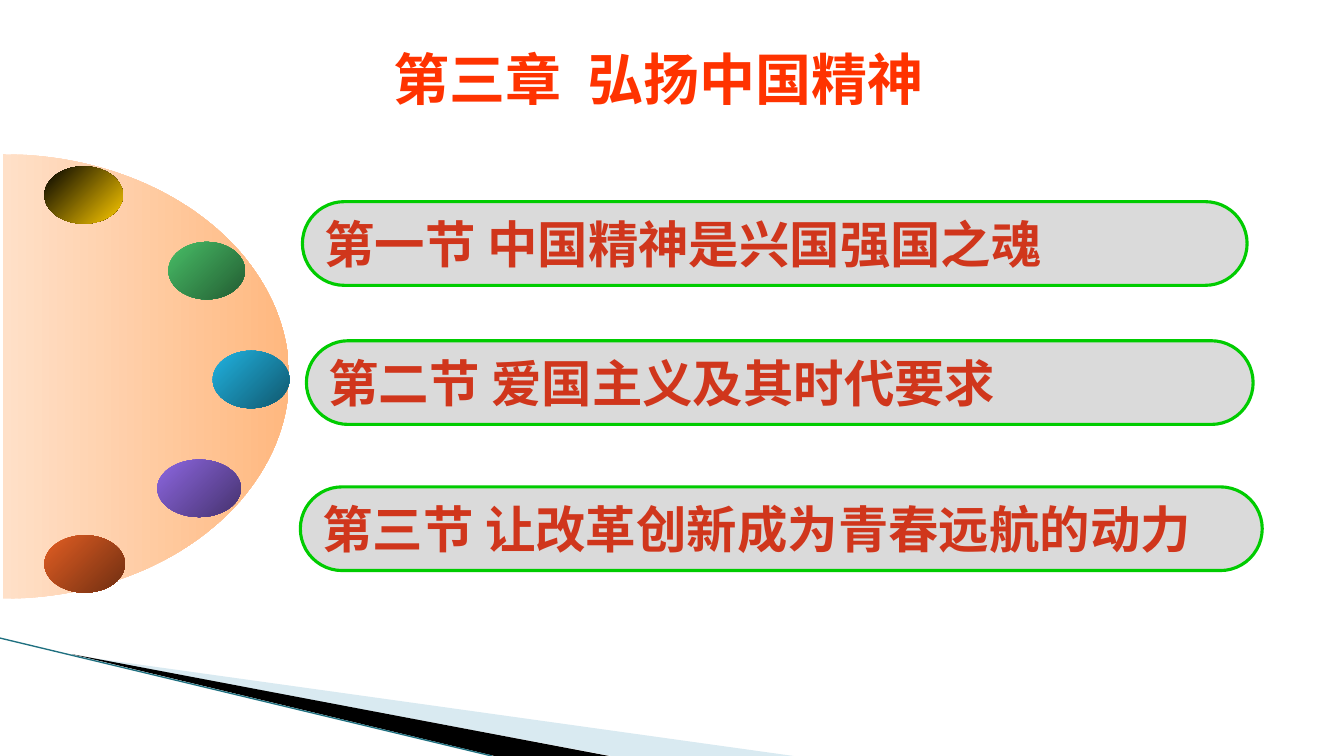
import math
from dataclasses import dataclass

import lxml.etree
import pptx
import pptx.dml.color
import pptx.enum.shapes
import pptx.enum.text
import pptx.oxml.ns
import pptx.util

FONT = "Noto Sans CJK SC"
WIDTH = pptx.util.Inches(13.33)
HEIGHT = pptx.util.Inches(7.5)
COLOURS = {
    "title": "FF3300",
    "section": "D0361C",
    "bar": "DADADA",
    "border": "00CC00",
    "disc_left": "FFE0C8",
    "disc_right": "FFB87F",
    "pale": "D9EAF1",
    "black": "000000",
    "edge": "1F7080",
}
BAR_HEIGHT = 11.07
BEAD_HEIGHT = 7.6
DIAGONAL = 315
Point = tuple[float, float]


@dataclass
class Section:
    text: str
    left: float
    top: float
    width: float


@dataclass
class Bead:
    left: float
    top: float
    width: float
    start: str
    end: str


@dataclass
class Wedge:
    points: list[Point]
    colour: str


SECTIONS = [
    Section("第一节 中国精神是兴国强国之魂", 22.5, 26.67, 70.29),
    Section("第二节 爱国主义及其时代要求", 22.8, 45.07, 70.44),
    Section("第三节 让改革创新成为青春远航的动力", 22.35, 64.4, 71.57),
]
BEADS = [
    Bead(3.3, 22, 5.85, "000000", "FFCC00"),
    Bead(12.53, 32, 5.7, "48BE67", "235C32"),
    Bead(15.83, 46.4, 5.7, "21B3E1", "10576D"),
    Bead(11.7, 60.8, 6.23, "8D67E1", "45326D"),
    Bead(3.3, 70.8, 6, "E35E23", "6E2E11"),
]
WEDGES = [
    Wedge([(5.48, 86.7), (59.04, 100), (45.5, 100)], COLOURS["pale"]),
    Wedge([(5.33, 86.53), (45.3, 100), (36.8, 100)], COLOURS["black"]),
]


def across(share: float) -> int:
    return round(WIDTH * share / 100)


def down(share: float) -> int:
    return round(HEIGHT * share / 100)


def rgb(colour: str) -> pptx.dml.color.RGBColor:
    return pptx.dml.color.RGBColor.from_string(colour)


def apply(target, values: dict) -> None:
    for name, value in values.items():
        setattr(target, name, value)


def paint(shape, colour: str) -> None:
    shape.shadow.inherit = False
    shape.fill.solid()
    shape.fill.fore_color.rgb = rgb(colour)
    shape.line.fill.background()


def paint_gradient(shape, colours: tuple[str, str], angle: float) -> None:
    shape.shadow.inherit = False
    shape.fill.gradient()
    shape.fill.gradient_angle = angle
    for stop, colour in zip(shape.fill.gradient_stops, colours):
        stop.color.rgb = rgb(colour)
    shape.line.fill.background()


def add_span(para, text: str, size: float, colour: str):
    span = para.add_run()
    span.text = text
    apply(span.font, {"name": FONT, "size": pptx.util.Pt(size), "bold": True})
    span.font.color.rgb = rgb(colour)
    properties = span._r.get_or_add_rPr()
    lxml.etree.SubElement(properties, pptx.oxml.ns.qn("a:ea"), typeface=FONT)
    return span


def add_outline(page, points: list[Point]):
    corners = [(across(x), down(y)) for x, y in points]
    builder = page.shapes.build_freeform(*corners[0])
    builder.add_line_segments(corners[1:], close=True)
    return builder.convert_to_shape()


def add_title(page) -> None:
    title = page.shapes.title
    apply(title, {"left": 0, "top": down(5.2), "width": across(98), "height": down(10.27)})
    apply(title.text_frame, {
        "word_wrap": True,
        "auto_size": pptx.enum.text.MSO_AUTO_SIZE.NONE,
        "vertical_anchor": pptx.enum.text.MSO_ANCHOR.MIDDLE,
    })
    para = title.text_frame.paragraphs[0]
    para.alignment = pptx.enum.text.PP_ALIGN.CENTER
    spans = [add_span(para, text, 40, COLOURS["title"]) for text in ("第三章", " ", "弘扬中国精神")]
    spans[1]._r.get_or_add_rPr().set("spc", "1000")


def add_wedges(page) -> None:
    for wedge in WEDGES:
        paint(add_outline(page, wedge.points), wedge.colour)
    edge = page.shapes.add_connector(
        pptx.enum.shapes.MSO_CONNECTOR.STRAIGHT, 0, down(84.4), across(36.6), down(100)
    )
    edge.line.width = pptx.util.Pt(0.95)
    edge.line.color.rgb = rgb(COLOURS["edge"])
    lxml.etree.SubElement(edge._element.spPr, pptx.oxml.ns.qn("a:effectLst"))


def add_half_disc(page) -> None:
    angles = [math.radians(degree) for degree in range(-90, 91, 2)]
    points = [(0.22 + 21.3 * math.cos(a), 49.8 + 29.4 * math.sin(a)) for a in angles]
    colours = (COLOURS["disc_left"], COLOURS["disc_right"])
    paint_gradient(add_outline(page, points), colours, 0)


def add_bead(page, bead: Bead) -> None:
    shape = page.shapes.add_shape(
        pptx.enum.shapes.MSO_SHAPE.OVAL,
        across(bead.left), down(bead.top), across(bead.width), down(BEAD_HEIGHT),
    )
    paint_gradient(shape, (bead.start, bead.end), DIAGONAL)


def add_section(page, section: Section) -> None:
    bar = page.shapes.add_shape(
        pptx.enum.shapes.MSO_SHAPE.ROUNDED_RECTANGLE,
        across(section.left), down(section.top), across(section.width), down(BAR_HEIGHT),
    )
    bar.adjustments[0] = 0.5
    paint(bar, COLOURS["bar"])
    bar.line.color.rgb = rgb(COLOURS["border"])
    bar.line.width = pptx.util.Pt(2.25)
    apply(bar.text_frame, {
        "word_wrap": True,
        "vertical_anchor": pptx.enum.text.MSO_ANCHOR.MIDDLE,
    })
    para = bar.text_frame.paragraphs[0]
    para.alignment = pptx.enum.text.PP_ALIGN.LEFT
    add_span(para, section.text, 36, COLOURS["section"])


def main() -> None:
    deck = pptx.Presentation()
    apply(deck, {"slide_width": WIDTH, "slide_height": HEIGHT})
    page = deck.slides.add_slide(deck.slide_layouts[5])
    add_title(page)
    add_wedges(page)
    add_half_disc(page)
    for bead in BEADS:
        add_bead(page, bead)
    for section in SECTIONS:
        add_section(page, section)
    deck.save("out.pptx")


if __name__ == "__main__":
    main()
